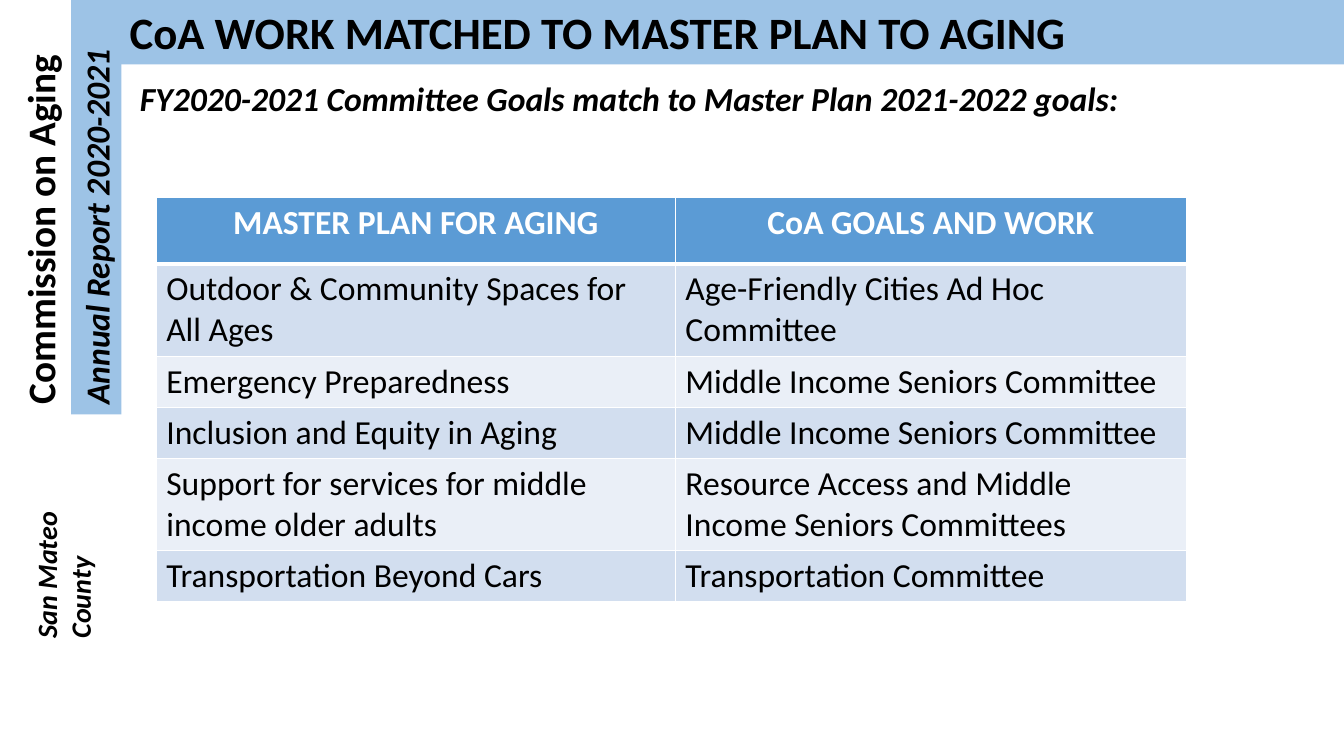
"""Builds the slide matching Commission on Aging work to the Master Plan for Aging."""
from lxml import etree
from pptx import Presentation
from pptx.dml.color import RGBColor
from pptx.enum.shapes import MSO_SHAPE
from pptx.enum.text import MSO_ANCHOR, PP_ALIGN
from pptx.oxml.ns import qn
from pptx.util import Pt

RECTANGLE = MSO_SHAPE.RECTANGLE
TOP = MSO_ANCHOR.TOP
LEFT, CENTER = PP_ALIGN.LEFT, PP_ALIGN.CENTER

BLACK = RGBColor(0x00, 0x00, 0x00)
WHITE = RGBColor(0xFF, 0xFF, 0xFF)
BAND_BLUE = RGBColor(0x9D, 0xC3, 0xE6)
HEADER_BLUE = RGBColor(0x5B, 0x9B, 0xD5)
ROW_FILLS = (RGBColor(0xD2, 0xDE, 0xEF), RGBColor(0xEA, 0xEF, 0xF7))

GOALS = [
    ("MASTER PLAN FOR AGING", "CoA GOALS AND WORK"),
    ("Outdoor & Community Spaces for All Ages", "Age-Friendly Cities Ad Hoc Committee"),
    ("Emergency Preparedness", "Middle Income Seniors Committee"),
    ("Inclusion and Equity in Aging", "Middle Income Seniors Committee"),
    ("Support for services for middle income older adults",
     "Resource Access and Middle Income Seniors Committees"),
    ("Transportation Beyond Cars", "Transportation Committee"),
]
COLUMN_WIDTHS = (370.8, 365)
HEADER_HEIGHT, ONE_LINE, TWO_LINES = 47.5, 36, 65
ROW_HEIGHTS = (HEADER_HEIGHT, TWO_LINES, ONE_LINE, ONE_LINE, TWO_LINES, ONE_LINE)


def write(text_frame, text, size=24, color=BLACK, bold=False, italic=False, align=LEFT):
    """Put one formatted paragraph into a text frame."""
    text_frame.word_wrap = True
    paragraph = text_frame.paragraphs[0]
    paragraph.text = text
    paragraph.alignment = align
    font = paragraph.runs[0].font
    font.name = SlideBuilder.FONT
    font.size = Pt(size)
    font.bold = bold
    font.italic = italic
    font.color.rgb = color


class SlideBuilder:
    """Holds the style and the current slide."""

    FONT = "Calibri"

    def __init__(self, presentation):
        """Add a blank slide."""
        self.slide = presentation.slides.add_slide(presentation.slide_layouts[6])

    def band(self, text, left, top, width, height, fill, rotation=0, **text_format):
        """Add a filled rectangle with text."""
        shape = self.slide.shapes.add_shape(
            RECTANGLE, Pt(left), Pt(top), Pt(width), Pt(height))
        shape.shadow.inherit = False
        shape.fill.solid()
        shape.fill.fore_color.rgb = fill
        shape.line.fill.background()
        shape.rotation = rotation
        shape.text_frame.vertical_anchor = TOP
        write(shape.text_frame, text, bold=True, **text_format)

    def spine(self, text, left, top, length, thickness, fill, **text_format):
        """Add a band that reads upward, placed by its visible top left corner."""
        shift = (length - thickness) / 2
        self.band(text, left - shift, top + shift, length, thickness, fill,
                  rotation=270, **text_format)

    def label(self, text, left, top, width, height, **text_format):
        """Add a plain text box."""
        box = self.slide.shapes.add_textbox(Pt(left), Pt(top), Pt(width), Pt(height))
        write(box.text_frame, text, **text_format)

    def border(self, cell, side, width):
        """Draw one white cell border."""
        properties = cell._tc.get_or_add_tcPr()
        line = etree.Element(qn(f"a:ln{side}"), w=str(Pt(width)))
        fill = etree.SubElement(line, qn("a:solidFill"))
        etree.SubElement(fill, qn("a:srgbClr"), val=str(WHITE))
        properties.insert("LRTB".index(side), line)

    def table(self, rows, left, top, widths, heights):
        """Add a table with a header row and banded rows."""
        table = self.slide.shapes.add_table(
            len(rows), len(widths), Pt(left), Pt(top),
            Pt(sum(widths)), Pt(sum(heights))).table
        for column, width in zip(table.columns, widths):
            column.width = Pt(width)
        for index, (row, height) in enumerate(zip(rows, heights)):
            table.rows[index].height = Pt(height)
            header = index == 0
            for cell, text in zip(table.rows[index].cells, row):
                cell.fill.solid()
                cell.fill.fore_color.rgb = HEADER_BLUE if header else ROW_FILLS[(index - 1) % 2]
                write(cell.text_frame, text, bold=header,
                      color=WHITE if header else BLACK,
                      align=CENTER if header else LEFT)
                for side in "LRTB":
                    under_header = (index, side) in ((0, "B"), (1, "T"))
                    self.border(cell, side, 3 if under_header else 1)


def main():
    """Build and save the slide."""
    presentation = Presentation()
    presentation.slide_width = Pt(960)
    presentation.slide_height = Pt(540)
    builder = SlideBuilder(presentation)
    builder.spine("Commission on Aging", 8, 14.4, 281.5, 41, WHITE, size=28)
    builder.spine("Annual Report 2020-2021", 50.8, 0, 296, 36, BAND_BLUE, italic=True)
    builder.spine("San Mateo County", 17.3, 296, 167, 31.7, WHITE, size=20, italic=True)
    builder.table(GOALS, 111.6, 141.1, COLUMN_WIDTHS, ROW_HEIGHTS)
    builder.band("CoA WORK MATCHED TO MASTER PLAN TO AGING",
                 85.5, 0, 874.5, 46, BAND_BLUE, size=32)
    builder.label("FY2020-2021 Committee Goals match to Master Plan 2021-2022 goals:",
                  92.9, 51.8, 847.4, 36, bold=True, italic=True)
    presentation.save("out.pptx")


if __name__ == "__main__":
    main()
